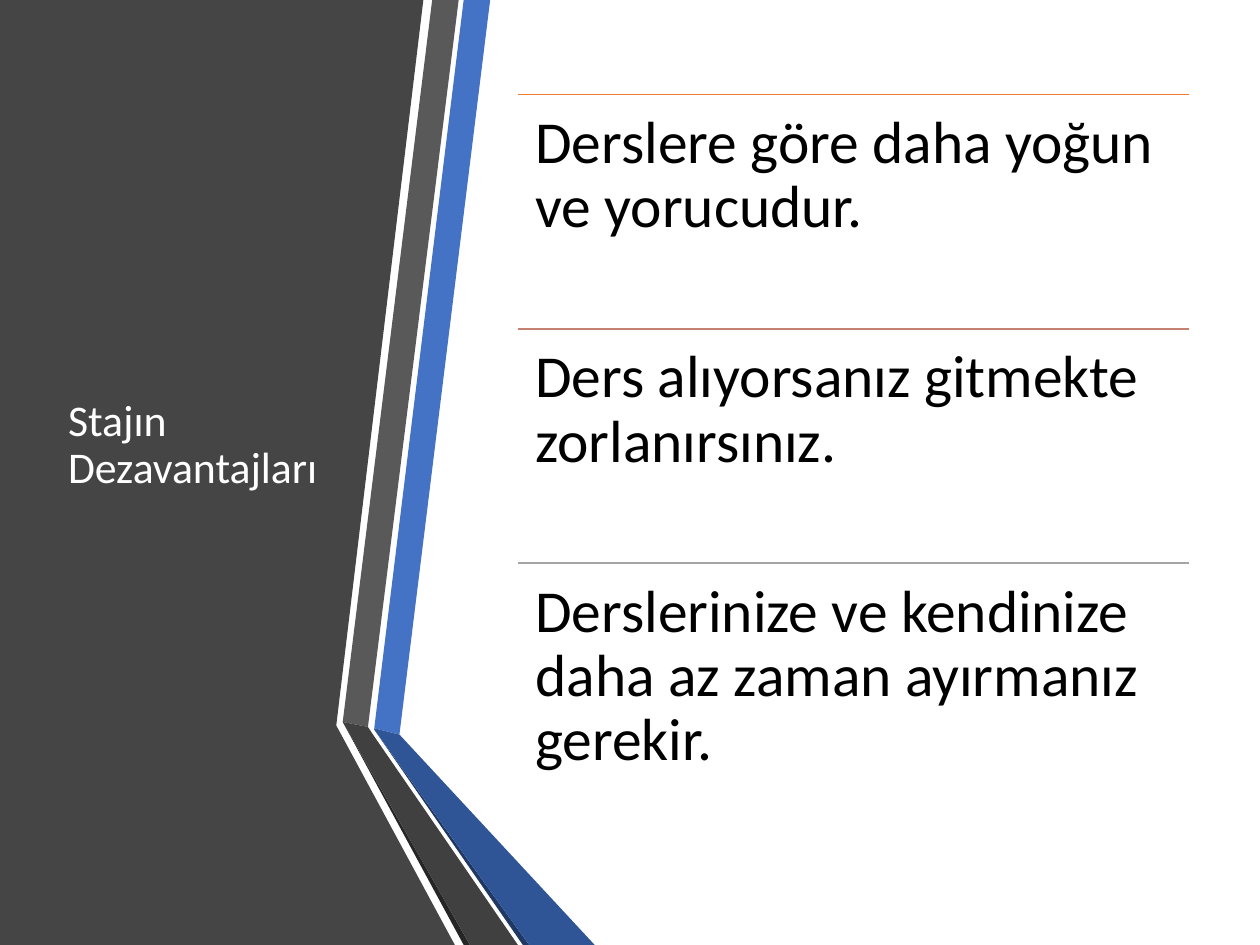
from dataclasses import dataclass

import pptx
import pptx.dml.color
import pptx.enum.shapes
import pptx.enum.text
import pptx.oxml
import pptx.util
from pptx.oxml.ns import qn

COLUMNS, ROWS = 10, 7.5  # grid of one-inch cells
BOTTOM = ROWS
TITLE_ONLY = 5


@dataclass(frozen=True)
class Theme:
    font: str = "Calibri"
    title_size: int = 25
    item_size: int = 34
    rule_width: int = 1
    line_spacing: float = 0.9
    inset: float = 0.14
    title_color: str = "FFFFFF"
    item_color: str = "000000"


@dataclass(frozen=True)
class Band:
    color: str
    corners: tuple[tuple[float, float], ...]


@dataclass(frozen=True)
class Item:
    text: str
    rule_color: str


THEME = Theme()

BANDS = (
    # side panel
    Band("454545", ((0, 0), (3.36, 0), (2.67, 5.75), (2.67, 5.76),
                    (3.61, BOTTOM), (0, BOTTOM))),
    # upper stripes
    Band("4472C4", ((2.97, 5.78), (3.17, 5.83), (3.89, 0), (3.68, 0))),
    Band("595959", ((3.64, 0), (3.43, 0), (2.72, 5.73), (2.92, 5.77))),
    # fold shadows
    Band("262626", ((2.72, 5.73), (3.68, BOTTOM), (3.73, BOTTOM))),
    Band("203864", ((2.97, 5.79), (4.15, BOTTOM), (4.2, BOTTOM))),
    # lower stripes
    Band("2F5597", ((2.97, 5.79), (4.2, BOTTOM), (4.72, BOTTOM),
                    (3.17, 5.83), (2.97, 5.78))),
    Band("404040", ((4.11, BOTTOM), (2.96, 5.83), (2.92, 5.77),
                    (2.72, 5.73), (3.73, BOTTOM))),
)

ITEMS = (
    Item("Derslere göre daha yoğun ve yorucudur.", "ED7D31"),
    Item("Ders alıyorsanız gitmekte zorlanırsınız.", "C48170"),
    Item("Derslerinize ve kendinize daha az zaman ayırmanız gerekir.", "A5A5A5"),
)

CONTENT_TOP, CONTENT_HEIGHT = 0.1 * ROWS, 5.58
TITLE_LEFT, TITLE_WIDTH = 0.44, 2.28
LIST_LEFT, LIST_WIDTH = 4.11, 5.33


def inches(*lengths: float) -> list[pptx.util.Length]:
    return [pptx.util.Inches(length) for length in lengths]


def rgb(color: str) -> pptx.dml.color.RGBColor:
    return pptx.dml.color.RGBColor.from_string(color)


def draw_band(page, band: Band) -> None:
    start, *others = [inches(*corner) for corner in band.corners]
    builder = page.shapes.build_freeform(*start)
    builder.add_line_segments(others, close=True)
    shape = builder.convert_to_shape()
    shape.shadow.inherit = False
    shape.fill.solid()
    shape.fill.fore_color.rgb = rgb(band.color)
    shape.line.fill.background()


def write_text(box, text: str, size: int, color: str,
               anchor: pptx.enum.text.MSO_ANCHOR) -> None:
    frame = box.text_frame
    frame.word_wrap = True
    frame.auto_size = pptx.enum.text.MSO_AUTO_SIZE.NONE
    frame.vertical_anchor = anchor
    frame.text = text
    para = frame.paragraphs[0]
    para.alignment = pptx.enum.text.PP_ALIGN.LEFT
    para.line_spacing = THEME.line_spacing
    para.font.name = THEME.font
    para.font.size = pptx.util.Pt(size)
    para.font.color.rgb = rgb(color)


def draw_title(page, text: str) -> None:
    title = page.shapes.title
    title.left, title.top, title.width, title.height = inches(
        TITLE_LEFT, CONTENT_TOP, TITLE_WIDTH, CONTENT_HEIGHT)
    write_text(title, text, THEME.title_size, THEME.title_color,
               pptx.enum.text.MSO_ANCHOR.MIDDLE)


def draw_rule(page, top: float, color: str) -> None:
    rule = page.shapes.add_connector(
        pptx.enum.shapes.MSO_CONNECTOR.STRAIGHT,
        *inches(LIST_LEFT, top, LIST_LEFT + LIST_WIDTH, top))
    rule.line.color.rgb = rgb(color)
    rule.line.width = pptx.util.Pt(THEME.rule_width)
    properties = rule._element.spPr
    properties.append(properties.makeelement(qn("a:effectLst"), {}))


def draw_item(page, item: Item, top: float, height: float) -> None:
    draw_rule(page, top, item.rule_color)
    box = page.shapes.add_textbox(*inches(LIST_LEFT, top, LIST_WIDTH, height))
    frame = box.text_frame
    frame.margin_left, frame.margin_top, frame.margin_right, frame.margin_bottom = (
        inches(*[THEME.inset] * 4))
    write_text(box, item.text, THEME.item_size, THEME.item_color,
               pptx.enum.text.MSO_ANCHOR.TOP)


def main() -> None:
    deck = pptx.Presentation()
    deck.slide_width, deck.slide_height = inches(COLUMNS, ROWS)
    page = deck.slides.add_slide(deck.slide_layouts[TITLE_ONLY])

    for band in BANDS:
        draw_band(page, band)
    # The title placeholder comes first by default; lift it above the panel.
    page.shapes._spTree.append(page.shapes.title._element)
    draw_title(page, "Stajın Dezavantajları")

    row_height = CONTENT_HEIGHT / len(ITEMS)
    for row, item in enumerate(ITEMS):
        draw_item(page, item, CONTENT_TOP + row * row_height, row_height)

    deck.save("out.pptx")


if __name__ == "__main__":
    main()
